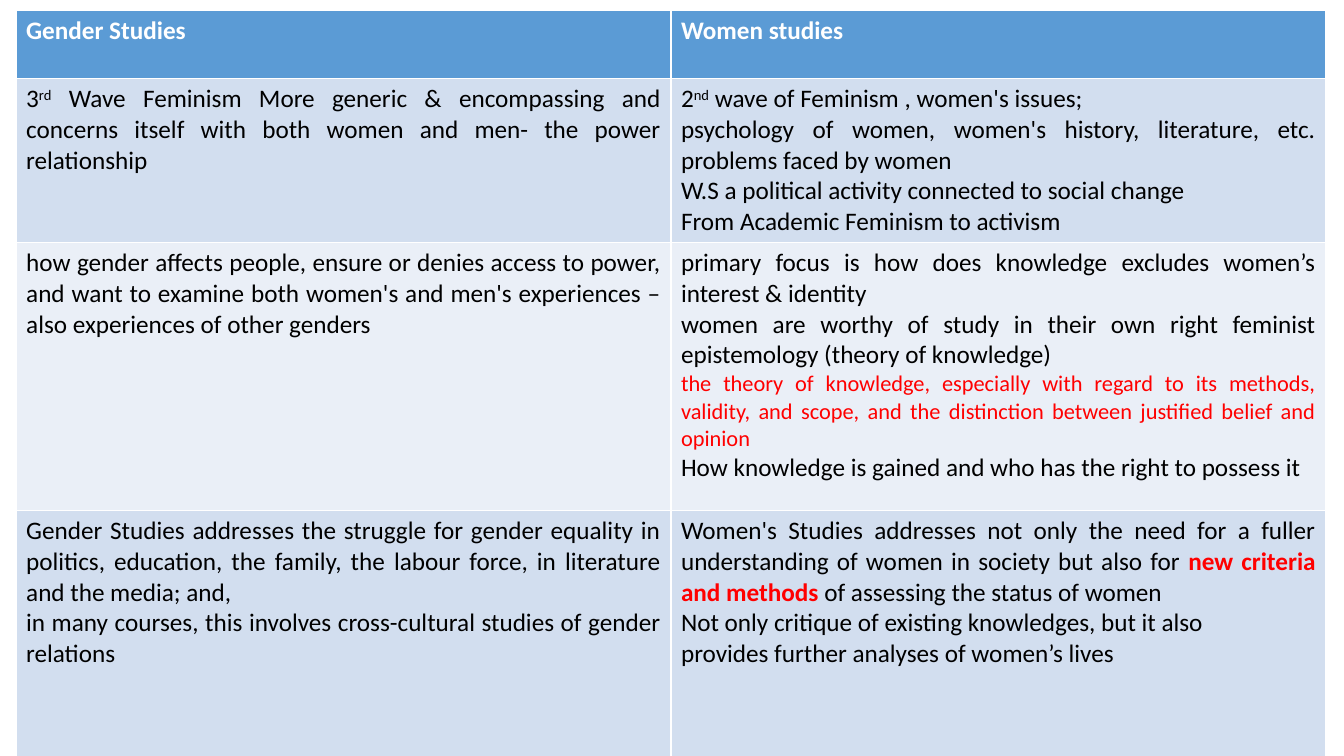
"""Build a slide with a table comparing gender studies and women studies."""
from pptx import Presentation
from pptx.dml.color import RGBColor
from pptx.enum.text import PP_ALIGN
from pptx.util import Inches, Pt

WHITE = RGBColor(0xFF, 0xFF, 0xFF)
BLACK = RGBColor(0x00, 0x00, 0x00)
RED = RGBColor(0xFF, 0x00, 0x00)
HEADER_BLUE = RGBColor(0x5B, 0x9B, 0xD5)
BAND_DARK = RGBColor(0xD2, 0xDE, 0xEF)
BAND_LIGHT = RGBColor(0xEA, 0xEF, 0xF7)


def add_run(paragraph, text, size=18, color=BLACK, bold=False, raised=False):
    run = paragraph.add_run()
    run.text = text
    run.font.name = "Calibri"
    run.font.size = Pt(size)
    run.font.bold = bold
    run.font.color.rgb = color
    if raised:
        run._r.get_or_add_rPr().set("baseline", "30000")


RAISED = {"raised": True}
HEADING = {"color": WHITE, "bold": True}
DEFINITION = {"size": 16, "color": RED}
EMPHASIS = {"color": RED, "bold": True}
JUSTIFIED, LEFT = PP_ALIGN.JUSTIFY, PP_ALIGN.LEFT

comparison = [
    (0.68, HEADER_BLUE, [
        [(LEFT, [("Gender Studies", HEADING)])],
        [(LEFT, [("Women studies", HEADING)])],
    ]),
    (1.38, BAND_DARK, [
        [(JUSTIFIED, [
            ("3", {}), ("rd", RAISED),
            (" Wave Feminism More generic & encompassing and concerns itself "
             "with both women and men- the power relationship", {})])],
        [(JUSTIFIED, [("2", {}), ("nd", RAISED),
                      (" wave of Feminism , women's issues;", {})]),
         (JUSTIFIED, [("psychology of women, women's history, literature, etc. "
                       "problems faced by women ", {})]),
         (JUSTIFIED, [("W.S a political activity connected to social change ", {})]),
         (JUSTIFIED, [("From Academic Feminism to activism ", {})])],
    ]),
    (2.66, BAND_LIGHT, [
        [(JUSTIFIED, [
            ("how gender affects people, ensure or denies access to power, and "
             "want to examine both women's and men's experiences – also "
             "experiences of other genders", {})])],
        [(JUSTIFIED, [("primary focus is how does knowledge excludes women’s "
                       "interest & identity ", {})]),
         (JUSTIFIED, [("women are worthy of study in their own right feminist "
                       "epistemology (theory of knowledge) ", {})]),
         (JUSTIFIED, [("the theory of knowledge, especially with regard to its "
                       "methods, validity, and scope, and the distinction "
                       "between justified belief and opinion", DEFINITION)]),
         (JUSTIFIED, [("How knowledge is gained and who has the right to "
                       "possess it", {})])],
    ]),
    (2.68, BAND_DARK, [
        [(JUSTIFIED, [("Gender Studies addresses the struggle for gender "
                       "equality in politics, education, the family, the labour "
                       "force, in literature and the media; and, ", {})]),
         (JUSTIFIED, [("in many courses, this involves cross-cultural studies "
                       "of gender relations", {})])],
        [(JUSTIFIED, [
            ("Women's Studies addresses not only the need for a fuller "
             "understanding of women in society but also for ", {}),
            ("new criteria and methods", EMPHASIS),
            (" of assessing the status of women", {})]),
         (LEFT, [("Not only critique of existing knowledges, but it also", {})]),
         (LEFT, [("provides further analyses of women’s lives", {})])],
    ]),
]

deck = Presentation()
deck.slide_width = Inches(13.33)
deck.slide_height = Inches(7.5)
slide = deck.slides.add_slide(deck.slide_layouts[6])
table = slide.shapes.add_table(
    len(comparison), 2, Inches(0.16), Inches(0.1), Inches(12.99), Inches(7.4)).table

for row_index, (height, fill_color, topics) in enumerate(comparison):
    table.rows[row_index].height = Inches(height)
    for column_index, statements in enumerate(topics):
        cell = table.cell(row_index, column_index)
        cell.fill.solid()
        cell.fill.fore_color.rgb = fill_color
        for position, (alignment, pieces) in enumerate(statements):
            frame = cell.text_frame
            statement = frame.add_paragraph() if position else frame.paragraphs[0]
            statement.alignment = alignment
            for text, style in pieces:
                add_run(statement, text, **style)

deck.save("out.pptx")
